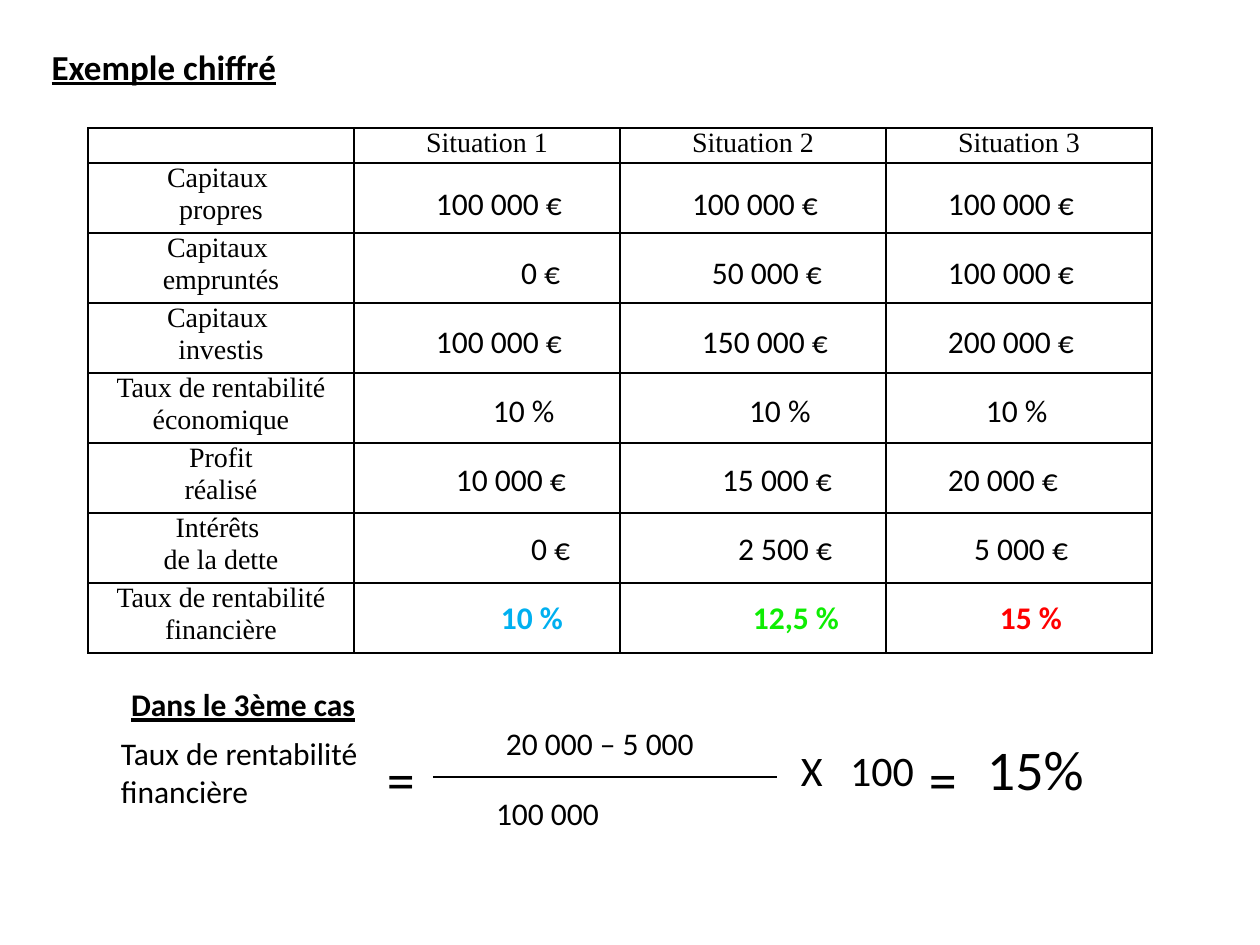
from lxml import etree
from pptx import Presentation
from pptx.dml.color import RGBColor
from pptx.enum.shapes import MSO_CONNECTOR
from pptx.enum.text import MSO_ANCHOR, PP_ALIGN
from pptx.oxml.ns import qn
from pptx.util import Emu, Pt

LINE = MSO_CONNECTOR.STRAIGHT
TOP = MSO_ANCHOR.TOP
LEFT, MID = PP_ALIGN.LEFT, PP_ALIGN.CENTER

BLACK = RGBColor(0x00, 0x00, 0x00)
BLUE = RGBColor(0x00, 0xB0, 0xF0)
GREEN = RGBColor(0x0E, 0xED, 0x03)
RED = RGBColor(0xFF, 0x00, 0x00)

SCALE = 914400 / 126  # EMU in one px
PAD = 13
HEAD = {"bold": True, "underline": True}


def px(n):
    return Emu(round(n * SCALE))


def write(frame, text, size, align=LEFT, font="Calibri", color=BLACK, **style):
    """Fill a text frame and give every line the same format."""
    frame.text = text
    looks = {"name": font, "size": Pt(size), **style}
    for para in frame.paragraphs:
        para.alignment = align
        for run in para.runs:
            run.font.color.rgb = color
            for key, val in looks.items():
                setattr(run.font, key, val)


prs = Presentation()
prs.slide_width, prs.slide_height = px(1260), px(945)
slide = prs.slides.add_slide(prs.slide_layouts[5])
shapes = slide.shapes

# Title
title = shapes.title
title.left, title.top, title.width, title.height = map(px, (39, 39, 374, 55))
title.text_frame.vertical_anchor = TOP
write(title.text_frame, "Exemple chiffré", 20, **HEAD)

# Table grid with its headings
tops = ["", "Situation 1", "Situation 2", "Situation 3"]
sides = [
    "Capitaux \npropres",
    "Capitaux \nempruntés",
    "Capitaux \ninvestis",
    "Taux de rentabilité économique",
    "Profit\nréalisé",
    "Intérêts \nde la dette",
    "Taux de rentabilité financière",
]
labels = [tops] + [[side, "", "", ""] for side in sides]
table = shapes.add_table(8, 4, px(88), px(128), px(1064), px(525)).table
table.first_row = table.horz_banding = False
for col in table.columns:
    col.width = px(266)
for i, row in enumerate(table.rows):
    row.height = px(70 if i else 35)
    for cell, label in zip(row.cells, labels[i]):
        cell.margin_left = cell.margin_right = px(9)
        cell.margin_top = cell.margin_bottom = 0
        write(cell.text_frame, label, 16, MID, "Times New Roman")
        if not label:
            para = cell.text_frame.paragraphs[0]._p
            etree.SubElement(para, qn("a:endParaRPr"), sz="1600")
        props = cell._tc.get_or_add_tcPr()
        for side in "LRTB":
            edge = etree.SubElement(props, qn("a:ln" + side), w=str(Pt(1)))
            fill = etree.SubElement(edge, qn("a:solidFill"))
            etree.SubElement(fill, qn("a:srgbClr"), val=str(BLACK))
        cell.fill.background()

# Values over the grid: left, width, indent, text
values = [
    [(423, 168, 0, "100 000 €"), (679, 168, 0, "100 000 €"), (935, 168, 0, "100 000 €")],
    [(423, 168, 85, "0 €"), (699, 168, 0, "50 000 €"), (935, 168, 0, "100 000 €")],
    [(423, 168, 0, "100 000 €"), (689, 168, 0, "150 000 €"), (935, 168, 0, "200 000 €")],
    [(423, 168, 57, "10 %"), (679, 168, 57, "10 %"), (916, 168, 57, "10 %")],
    [(443, 168, 0, "10 000 €"), (709, 168, 0, "15 000 €"), (935, 168, 0, "20 000 €")],
    [(433, 168, 85, "0 €"), (640, 207, 85, "2 500 €"), (876, 207, 85, "5 000 €")],
    [(403, 186, 85, "10 %"), (669, 186, 71, "12,5 %"), (916, 186, 71, "15 %")],
]
rates = [{"color": color, "bold": True} for color in (BLUE, GREEN, RED)]
notes = []
for i, line in enumerate(values):
    styles = rates if i == len(values) - 1 else [{}] * 3
    for (left, wide, shift, text), style in zip(line, styles):
        notes.append((left, 178 + 69 * i, wide, 50, shift, text, 18, style))

# Worked formula for the third case
notes += [
    (118, 679, 258, 50, 0, "Dans le 3ème cas", 18, HEAD),
    (108, 728, 286, 89, 0, "Taux de rentabilité\nfinancière", 18, {}),
    (374, 738, 39, 81, 0, "=", 32, {}),
    (493, 718, 286, 50, 0, "20 000 – 5 000", 18, {}),
    (483, 788, 286, 50, 0, "100 000", 18, {}),
    (788, 738, 39, 63, 0, "X", 24, {}),
    (837, 738, 118, 63, 0, "100", 24, {}),
    (916, 738, 39, 81, 0, "=", 32, {}),
    (974, 728, 178, 81, 0, "15%", 32, {}),
]
for left, top, wide, high, shift, text, size, style in notes:
    frame = shapes.add_textbox(px(left), px(top), px(wide), px(high)).text_frame
    frame.word_wrap = True
    frame.margin_left = px(PAD + shift)
    write(frame, text, size, **style)

bar = shapes.add_connector(LINE, px(433), px(777), px(777), px(777))
bar.line.color.rgb = BLACK
bar.line.width = Pt(1.5)
etree.SubElement(bar._element.spPr, qn("a:effectLst"))

prs.save("out.pptx")
